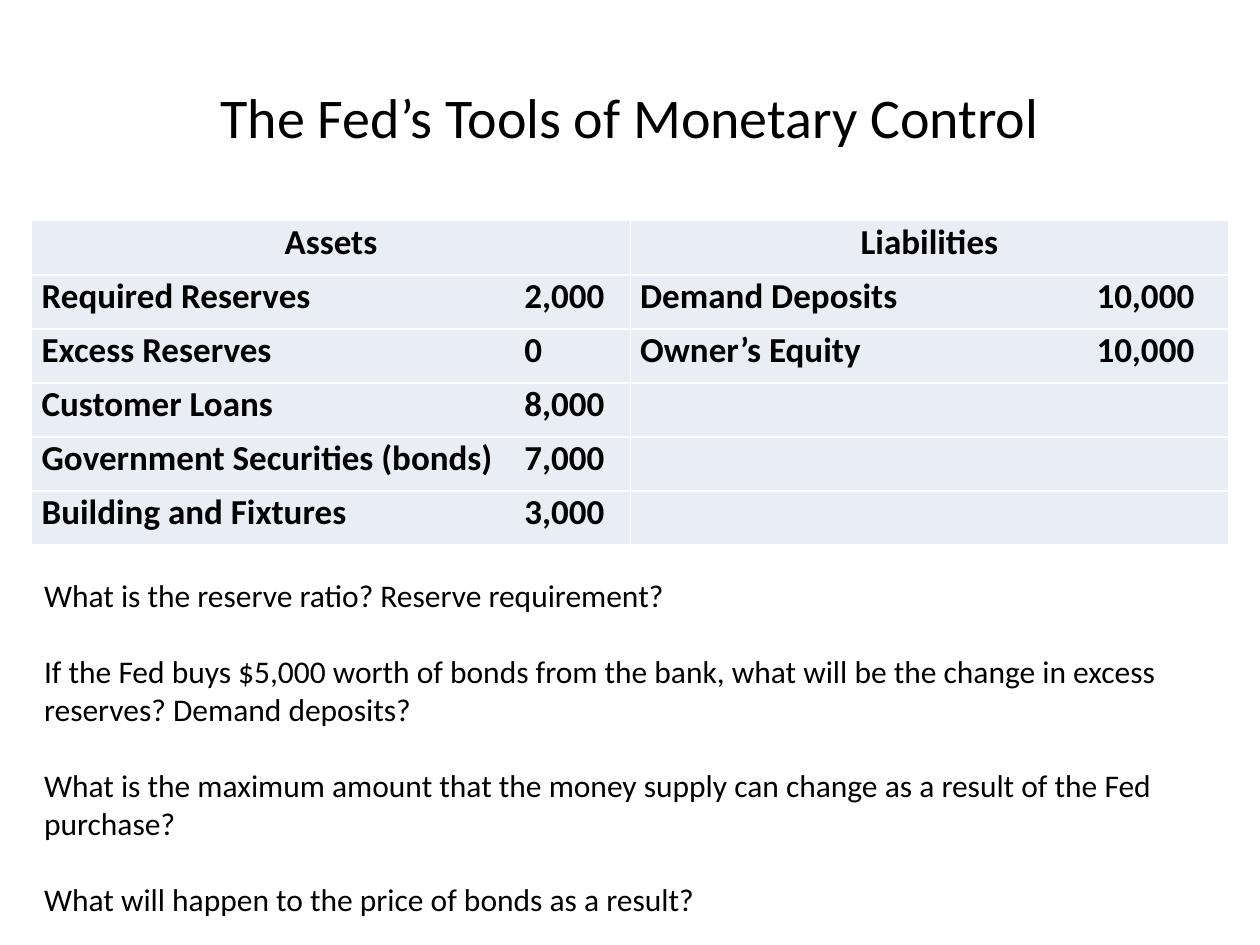
from lxml.etree import SubElement
from pptx import Presentation
from pptx.dml.color import RGBColor
from pptx.enum.shapes import MSO_SHAPE as SHAPE
from pptx.enum.text import MSO_ANCHOR as ANCHOR, PP_ALIGN as ALIGN
from pptx.oxml.ns import qn
from pptx.util import Cm, Pt

TITLE = "The Fed’s Tools of Monetary Control"
FONT, BLACK, WHITE, CELL = "Calibri", "000000", "FFFFFF", "E9EDF4"
SIDES = [
    ("Assets", 9.73, [
        ("Required Reserves", "2,000"),
        ("Excess Reserves", "0"),
        ("Customer Loans", "8,000"),
        ("Government Securities (bonds)", "7,000"),
        ("Building and Fixtures", "3,000"),
    ]),
    ("Liabilities", 9.2, [
        ("Demand Deposits", "10,000"),
        ("Owner’s Equity", "10,000"),
    ]),
]
QUESTIONS = [
    "What is the reserve ratio? Reserve requirement?",
    "If the Fed buys $5,000 worth of bonds from the bank, what will be "
    "the change in excess reserves? Demand deposits?",
    "What is the maximum amount that the money supply can change as a "
    "result of the Fed purchase?",
    "What will happen to the price of bonds as a result?",
]
LEFT, WIDTH, ROW_H = 0.64, 24.13, 1.09


def paint(fill, color):
    fill.solid()
    fill.fore_color.rgb = RGBColor.from_string(color)


def write(p, text, size, align, bold=False):
    p.text = text
    p.alignment = align
    for r in p.runs:
        r.font.name, r.font.size, r.font.bold = FONT, Pt(size), bold
        r.font.color.rgb = RGBColor.from_string(BLACK)


def add_tab(p, pos):
    tabs = SubElement(p._p.get_or_add_pPr(), qn("a:tabLst"))
    SubElement(tabs, qn("a:tab"), pos=str(Cm(pos)), algn="l")


def add_title(slide):
    title = slide.shapes.title
    title.left, title.top = Cm(1.27), Cm(0.76)
    title.width, title.height = Cm(22.86), Cm(3.18)
    title.text_frame.vertical_anchor = ANCHOR.MIDDLE
    write(title.text_frame.paragraphs[0], TITLE, 32, ALIGN.CENTER)


def add_balance_sheet(slide):
    rows = 1 + max(len(items) for _, _, items in SIDES)
    table = slide.shapes.add_table(rows, len(SIDES), Cm(LEFT), Cm(4.45),
                                   Cm(WIDTH), Cm(ROW_H * rows)).table
    table.first_row = table.horz_banding = False
    for cell in table.iter_cells():
        paint(cell.fill, CELL)
        cell.margin_left = cell.margin_right = Cm(0.2)
        cell.margin_top = cell.margin_bottom = 0
    for col, (heading, tab, items) in enumerate(SIDES):
        p = table.cell(0, col).text_frame.paragraphs[0]
        write(p, heading, 20, ALIGN.CENTER, True)
        for row, item in enumerate(items, 1):
            p = table.cell(row, col).text_frame.paragraphs[0]
            write(p, "\t".join(item), 20, ALIGN.LEFT, True)
            add_tab(p, tab)


def add_questions(slide):
    sp = slide.shapes.add_shape(SHAPE.RECTANGLE, Cm(LEFT), Cm(11.48),
                                Cm(WIDTH), Cm(7.19))
    sp.shadow.inherit = False
    paint(sp.fill, WHITE)
    sp.line.fill.background()
    tf = sp.text_frame
    tf.word_wrap = True
    tf.vertical_anchor = ANCHOR.TOP
    for i, question in enumerate(QUESTIONS):
        p = tf.add_paragraph() if i else tf.paragraphs[0]
        write(p, question, 18, ALIGN.LEFT)
        p.space_before = Pt(22 if i else 0)


def main():
    prs = Presentation()
    prs.slide_width, prs.slide_height = Cm(25.4), Cm(19.05)
    slide = prs.slides.add_slide(prs.slide_layouts[5])
    add_title(slide)
    add_balance_sheet(slide)
    add_questions(slide)
    prs.save("out.pptx")


if __name__ == "__main__":
    main()
